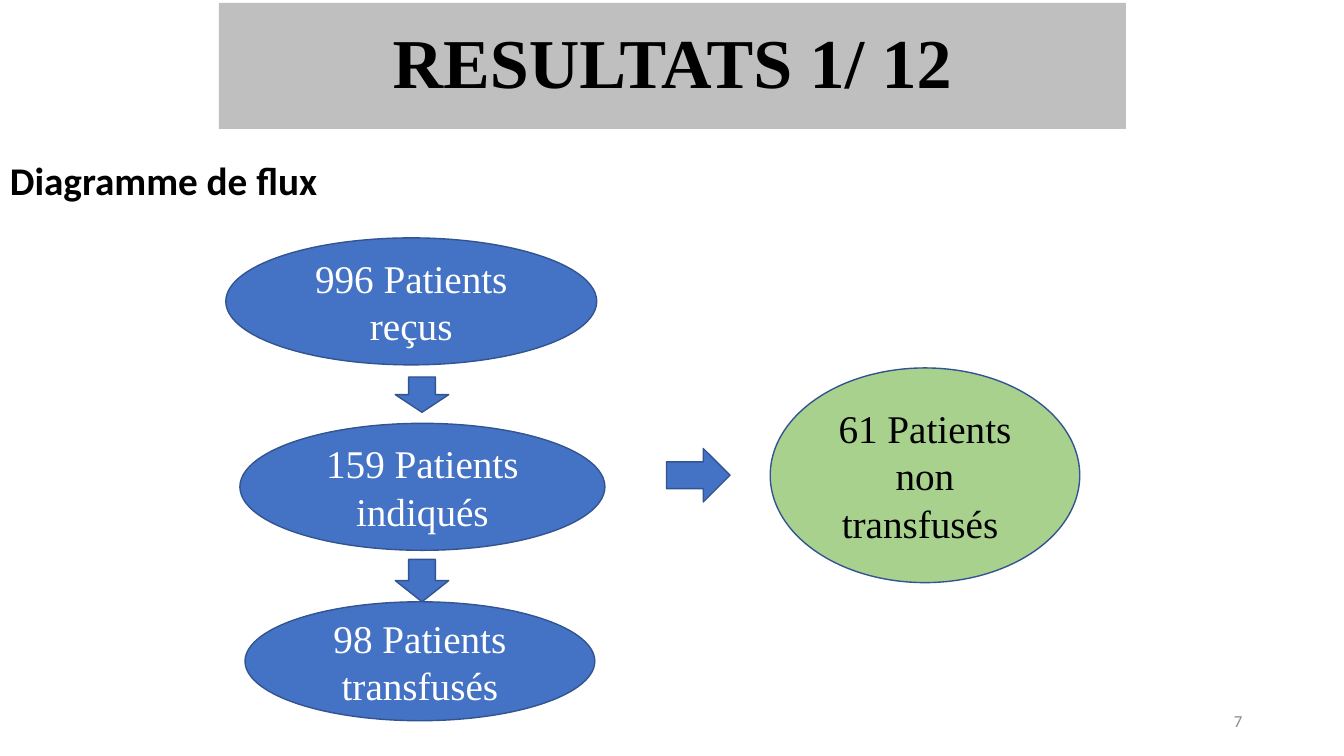
from dataclasses import dataclass

from pptx import Presentation
from pptx.dml.color import RGBColor
from pptx.enum.shapes import MSO_SHAPE
from pptx.enum.text import MSO_ANCHOR, PP_ALIGN
from pptx.shapes.autoshape import Shape
from pptx.slide import Slide
from pptx.util import Inches, Pt

WIDTH, HEIGHT = Inches(13.33), Inches(7.5)
BLACK = RGBColor(0x00, 0x00, 0x00)
WHITE = RGBColor(0xFF, 0xFF, 0xFF)
BLUE = RGBColor(0x44, 0x72, 0xC4)
NAVY = RGBColor(0x32, 0x54, 0x91)
GREEN = RGBColor(0xA9, 0xD1, 0x8E)
SILVER = RGBColor(0xBF, 0xBF, 0xBF)
GREY = RGBColor(0x89, 0x89, 0x89)
SERIF, SANS = "Times New Roman", "Calibri"


@dataclass(frozen=True)
class Box:
    """Place and size, in percent of the slide's width and height."""
    left: float
    top: float
    width: float
    height: float

    def emu(self) -> tuple[int, int, int, int]:
        return (round(WIDTH * self.left / 100), round(HEIGHT * self.top / 100),
                round(WIDTH * self.width / 100), round(HEIGHT * self.height / 100))


@dataclass(frozen=True)
class Style:
    size: float
    name: str
    color: RGBColor
    bold: bool = False
    align: PP_ALIGN = PP_ALIGN.CENTER
    anchor: MSO_ANCHOR = MSO_ANCHOR.MIDDLE
    spacing: float = 1.0


@dataclass(frozen=True)
class Node:
    text: str
    box: Box
    fill: RGBColor = BLUE
    ink: RGBColor = WHITE


@dataclass(frozen=True)
class Arrow:
    kind: MSO_SHAPE
    box: Box


TITLE = Style(50, SERIF, BLACK, bold=True, spacing=0.9)
HEADING = Style(28, SANS, BLACK, bold=True, align=PP_ALIGN.LEFT,
                anchor=MSO_ANCHOR.TOP, spacing=0.9)
NUMBER = Style(12, SANS, GREY, align=PP_ALIGN.RIGHT)

NODES = [
    Node("996 Patients reçus", Box(16.8, 31.47, 27.6, 16.8)),
    Node("159 Patients indiqués", Box(17.85, 56, 27.16, 16.8)),
    Node("98 Patients transfusés", Box(18.23, 79.6, 26.03, 15.73)),
    Node("61 Patients non transfusés ", Box(57.31, 48.67, 23.03, 28.4), GREEN, BLACK),
]
ARROWS = [
    Arrow(MSO_SHAPE.DOWN_ARROW, Box(29.41, 49.87, 3.98, 4.67)),
    Arrow(MSO_SHAPE.DOWN_ARROW, Box(29.41, 74, 3.98, 5.6)),
    Arrow(MSO_SHAPE.RIGHT_ARROW, Box(49.59, 59.33, 4.73, 7.07)),
]


def write(shape: Shape, text: str, style: Style) -> None:
    frame = shape.text_frame
    frame.word_wrap = True
    frame.vertical_anchor = style.anchor
    para = frame.paragraphs[0]
    para.alignment = style.align
    para.line_spacing = style.spacing
    run = para.add_run()
    run.text = text
    look = {"size": Pt(style.size), "name": style.name, "bold": style.bold}
    for key, value in look.items():
        setattr(run.font, key, value)
    run.font.color.rgb = style.color


def draw(slide: Slide, kind: MSO_SHAPE, box: Box, fill: RGBColor,
         line: RGBColor | None = NAVY) -> Shape:
    shape = slide.shapes.add_shape(kind, *box.emu())
    shape.shadow.inherit = False
    shape.fill.solid()
    shape.fill.fore_color.rgb = fill
    if line is None:
        shape.line.fill.background()
    else:
        shape.line.color.rgb = line
        shape.line.width = Pt(1)
    return shape


def label(slide: Slide, text: str, box: Box, style: Style) -> None:
    write(slide.shapes.add_textbox(*box.emu()), text, style)


def main() -> None:
    deck = Presentation()
    deck.slide_width, deck.slide_height = WIDTH, HEIGHT
    slide = deck.slides.add_slide(deck.slide_layouts[6])

    banner = draw(slide, MSO_SHAPE.RECTANGLE, Box(16.28, 0.4, 67.5, 16.67), SILVER, None)
    write(banner, "RESULTATS 1/ 12", TITLE)
    label(slide, "Diagramme de flux", Box(0, 20.67, 100, 8), HEADING)
    label(slide, "7", Box(70.67, 92.67, 22.5, 5.33), NUMBER)

    for arrow in ARROWS:
        draw(slide, arrow.kind, arrow.box, BLUE)
    for node in NODES:
        oval = draw(slide, MSO_SHAPE.OVAL, node.box, node.fill)
        write(oval, node.text, Style(28, SERIF, node.ink))

    deck.save("out.pptx")


if __name__ == "__main__":
    main()
